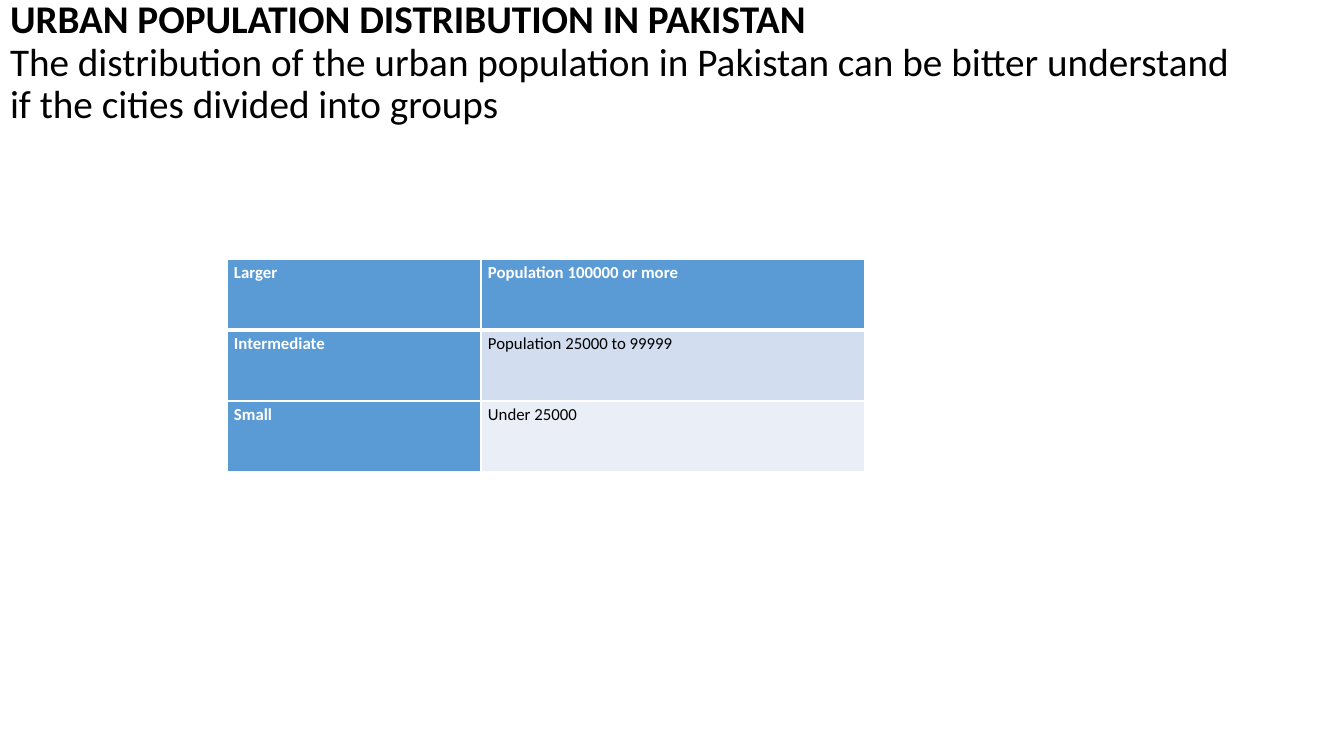
from dataclasses import dataclass

from lxml import etree
from pptx import Presentation
from pptx.dml.color import RGBColor
from pptx.enum.text import MSO_ANCHOR
from pptx.oxml.ns import qn
from pptx.util import Emu, Pt

TOP = MSO_ANCHOR.TOP
PX = 9071  # EMU in one px at 100.8 px to the inch


@dataclass(frozen=True)
class Theme:
    font: str = "Calibri"
    title_size: float = 28
    table_size: float = 12
    ink: str = "000000"
    white: str = "FFFFFF"
    header: str = "5B9BD5"
    bands: tuple = ("D2DEEF", "EAEFF7")
    rule: float = 1
    header_rule: float = 3


THEME = Theme()
HEADING = "URBAN POPULATION DISTRIBUTION IN PAKISTAN"
SUBHEADING = ("The distribution of the urban population in Pakistan can be "
              "bitter understand if the cities divided into groups")
CITY_GROUPS = [
    ("Larger", "Population 100000 or more"),
    ("Intermediate", "Population 25000 to 99999"),
    ("Small", "Under 25000"),
]
COLUMN_WIDTHS = (254, 384)
ROW_HEIGHT = 71


def px(n):
    return Emu(n * PX)


def style_run(r, size, color, bold):
    r.font.name = THEME.font
    r.font.size = Pt(size)
    r.font.bold = bold
    r.font.color.rgb = RGBColor.from_string(color)


def add_title(s, x, y, w, h):
    tf = s.shapes.add_textbox(px(x), px(y), px(w), px(h)).text_frame
    tf.word_wrap = True
    tf.vertical_anchor = TOP
    tf.margin_left = tf.margin_right = px(10)
    tf.margin_top = tf.margin_bottom = 0
    p = tf.paragraphs[0]
    p.text = f"{HEADING}\v{SUBHEADING}"
    p.line_spacing = 0.9
    for r, bold in zip(p.runs, (True, False)):
        style_run(r, THEME.title_size, THEME.ink, bold)


def set_border(cell, side, width):
    """Draw one white side; call in the order L, R, T, B, before the fill."""
    tc_pr = cell._tc.get_or_add_tcPr()
    ln = etree.SubElement(tc_pr, qn(f"a:ln{side}"), w=str(Pt(width)))
    fill = etree.SubElement(ln, qn("a:solidFill"))
    etree.SubElement(fill, qn("a:srgbClr"), val=THEME.white)


def fill_cell(cell, text, row, is_label):
    is_header = row == 0 or is_label
    heavy_side = {0: "B", 1: "T"}.get(row)
    for side in "LRTB":
        heavy = side == heavy_side
        set_border(cell, side, THEME.header_rule if heavy else THEME.rule)
    cell.fill.solid()
    color = THEME.header if is_header else THEME.bands[(row - 1) % 2]
    cell.fill.fore_color.rgb = RGBColor.from_string(color)
    cell.margin_left = cell.margin_right = px(7)
    cell.margin_top = cell.margin_bottom = 0
    cell.vertical_anchor = TOP
    p = cell.text_frame.paragraphs[0]
    p.text = text
    p.line_spacing = 1.15
    p.space_after = Pt(10)
    ink = THEME.white if is_header else THEME.ink
    style_run(p.runs[0], THEME.table_size, ink, is_header)


def add_city_table(s, x, y):
    rows, cols = len(CITY_GROUPS), len(COLUMN_WIDTHS)
    table = s.shapes.add_table(rows, cols, px(x), px(y), px(sum(COLUMN_WIDTHS)),
                               px(rows * ROW_HEIGHT)).table
    table.first_col = True
    for column, width in zip(table.columns, COLUMN_WIDTHS):
        column.width = px(width)
    for i, group in enumerate(CITY_GROUPS):
        table.rows[i].height = px(ROW_HEIGHT)
        for j, text in enumerate(group):
            fill_cell(table.cell(i, j), text, i, j == 0)


def main():
    prs = Presentation()
    prs.slide_width, prs.slide_height = px(1344), px(756)
    s = prs.slides.add_slide(prs.slide_layouts[6])
    add_title(s, 0, 0, 1252, 186)
    add_city_table(s, 227, 259)
    prs.save("out.pptx")


if __name__ == "__main__":
    main()
